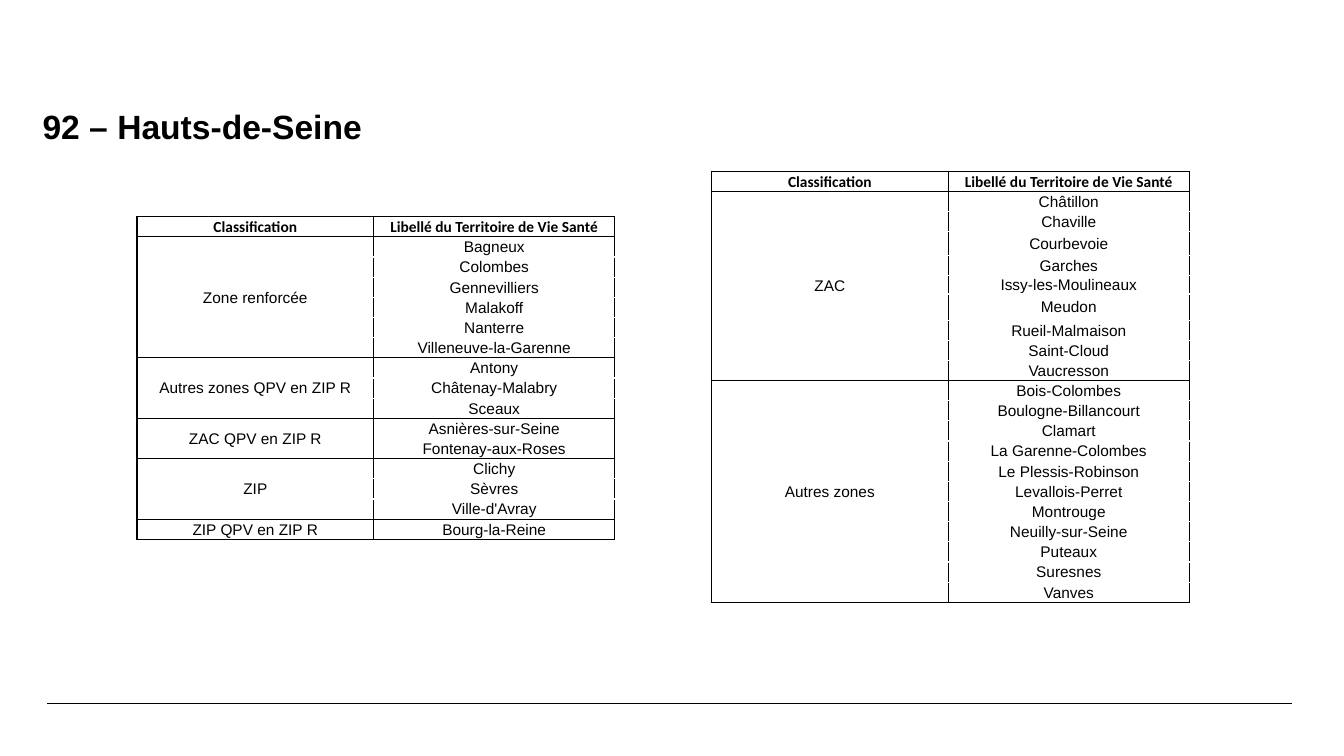
from lxml import etree
from pptx import Presentation
from pptx.dml.color import RGBColor
from pptx.enum.shapes import MSO_CONNECTOR
from pptx.enum.text import MSO_ANCHOR, MSO_AUTO_SIZE, PP_ALIGN
from pptx.oxml.ns import qn
from pptx.util import Pt

STRAIGHT = MSO_CONNECTOR.STRAIGHT
TOP, MIDDLE = MSO_ANCHOR.TOP, MSO_ANCHOR.MIDDLE
LEFT, CENTER = PP_ALIGN.LEFT, PP_ALIGN.CENTER
NO_AUTOFIT = MSO_AUTO_SIZE.NONE

BLACK, WHITE = "000000", "FFFFFF"
HEADINGS = ("Classification", "Libellé du Territoire de Vie Santé")
ROW_HEIGHT = 14.4
COLUMN_WIDTHS = (169.2, 172.1)

PRIORITY_ZONES = [
    ("Zone renforcée", WHITE,
     ["Bagneux", "Colombes", "Gennevilliers", "Malakoff", "Nanterre", "Villeneuve-la-Garenne"]),
    ("Autres zones QPV en ZIP R", WHITE, ["Antony", "Châtenay-Malabry", "Sceaux"]),
    ("ZAC QPV en ZIP R", None, ["Asnières-sur-Seine", "Fontenay-aux-Roses"]),
    ("ZIP", WHITE, ["Clichy", "Sèvres", "Ville-d'Avray"]),
    ("ZIP QPV en ZIP R", WHITE, ["Bourg-la-Reine"]),
]
OTHER_ZONES = [
    ("ZAC", WHITE,
     ["Châtillon", "Chaville", "Courbevoie", "Garches", "Issy-les-Moulineaux", "Meudon",
      "Rueil-Malmaison", "Saint-Cloud", "Vaucresson"]),
    ("Autres zones", WHITE,
     ["Bois-Colombes", "Boulogne-Billancourt", "Clamart", "La Garenne-Colombes",
      "Le Plessis-Robinson", "Levallois-Perret", "Montrouge", "Neuilly-sur-Seine",
      "Puteaux", "Suresnes", "Vanves"]),
]


def color(value):
    return RGBColor.from_string(value)


def write_text(frame, text, font="Arial", size=11, bold=False, align=CENTER, space_after=0):
    para = frame.paragraphs[0]
    para.alignment = align
    para.space_before = Pt(0)
    para.space_after = Pt(space_after)
    span = para.add_run()
    span.text = text
    span.font.name = font
    span.font.size = Pt(size)
    span.font.bold = bold
    span.font.color.rgb = color(BLACK)


class ZoneSlide:
    def __init__(self, deck):
        self.slide = deck.slides.add_slide(deck.slide_layouts[5])
        self.edge = 1

    def title(self, text, left, top, width, height):
        box = self.slide.shapes.title
        box.left, box.top, box.width, box.height = Pt(left), Pt(top), Pt(width), Pt(height)
        frame = box.text_frame
        frame.auto_size = NO_AUTOFIT
        frame.word_wrap = True
        frame.vertical_anchor = TOP
        frame.margin_left = Pt(9.4)
        frame.margin_top = Pt(2)
        frame.margin_right = frame.margin_bottom = 0
        write_text(frame, text, size=24, bold=True, align=LEFT, space_after=6.7)

    def rule(self, left, right, top):
        line = self.slide.shapes.add_connector(STRAIGHT, Pt(left), Pt(top), Pt(right), Pt(top))
        line.line.color.rgb = color(BLACK)
        line.line.width = Pt(0.8)
        etree.SubElement(line._element.spPr, qn("a:effectLst"))

    def cell(self, cell, top=BLACK, bottom=BLACK):
        cell.vertical_anchor = MIDDLE
        cell.margin_left = cell.margin_right = cell.margin_top = Pt(0.7)
        cell.margin_bottom = 0
        properties = cell._tc.get_or_add_tcPr()
        for side, value in (("L", BLACK), ("R", BLACK), ("T", top), ("B", bottom)):
            border = etree.SubElement(properties, qn(f"a:ln{side}"), w=str(Pt(self.edge)))
            if value is None:
                etree.SubElement(border, qn("a:noFill"))
            else:
                fill = etree.SubElement(border, qn("a:solidFill"))
                etree.SubElement(fill, qn("a:srgbClr"), val=value)
        cell.fill.solid()
        cell.fill.fore_color.rgb = color(WHITE)

    def zone_table(self, zones, left, top, special_heights):
        count = 1 + sum(len(towns) for _, _, towns in zones)
        heights = [special_heights.get(row, ROW_HEIGHT) for row in range(count)]
        table = self.slide.shapes.add_table(
            count, 2, Pt(left), Pt(top), Pt(sum(COLUMN_WIDTHS)), Pt(sum(heights))).table
        table.first_row = table.horz_banding = False
        for column, width in zip(table.columns, COLUMN_WIDTHS):
            column.width = Pt(width)
        for row, height in zip(table.rows, heights):
            row.height = Pt(height)
        for index, heading in enumerate(HEADINGS):
            self.cell(table.cell(0, index))
            write_text(table.cell(0, index).text_frame, heading, font="Calibri", bold=True)
        start = 1
        for label, divider, towns in zones:
            last = len(towns) - 1
            for index, town in enumerate(towns):
                label_cell, town_cell = table.cell(start + index, 0), table.cell(start + index, 1)
                above = BLACK if index == 0 else divider
                below = BLACK if index == last else divider
                self.cell(label_cell, above, BLACK if index == 0 else below)
                self.cell(town_cell, above, below)
                write_text(town_cell.text_frame, town)
            zone_cell = table.cell(start, 0)
            if last:
                zone_cell.merge(table.cell(start + last, 0))
            write_text(zone_cell.text_frame, label)
            start += len(towns)


def main():
    deck = Presentation()
    deck.slide_width, deck.slide_height = Pt(960), Pt(540)
    page = ZoneSlide(deck)
    for left in (33.8, 38.2):
        page.rule(left, left + 884.5, 502.4)
    page.title("92 – Hauts-de-Seine", 21, 73.4, 728.6, 49)
    page.zone_table(PRIORITY_ZONES, 97.8, 154.8, {})
    page.zone_table(OTHER_ZONES, 508.2, 122.3, {3: 17.2, 5: 13, 6: 18.6})
    deck.save("out.pptx")


if __name__ == "__main__":
    main()
